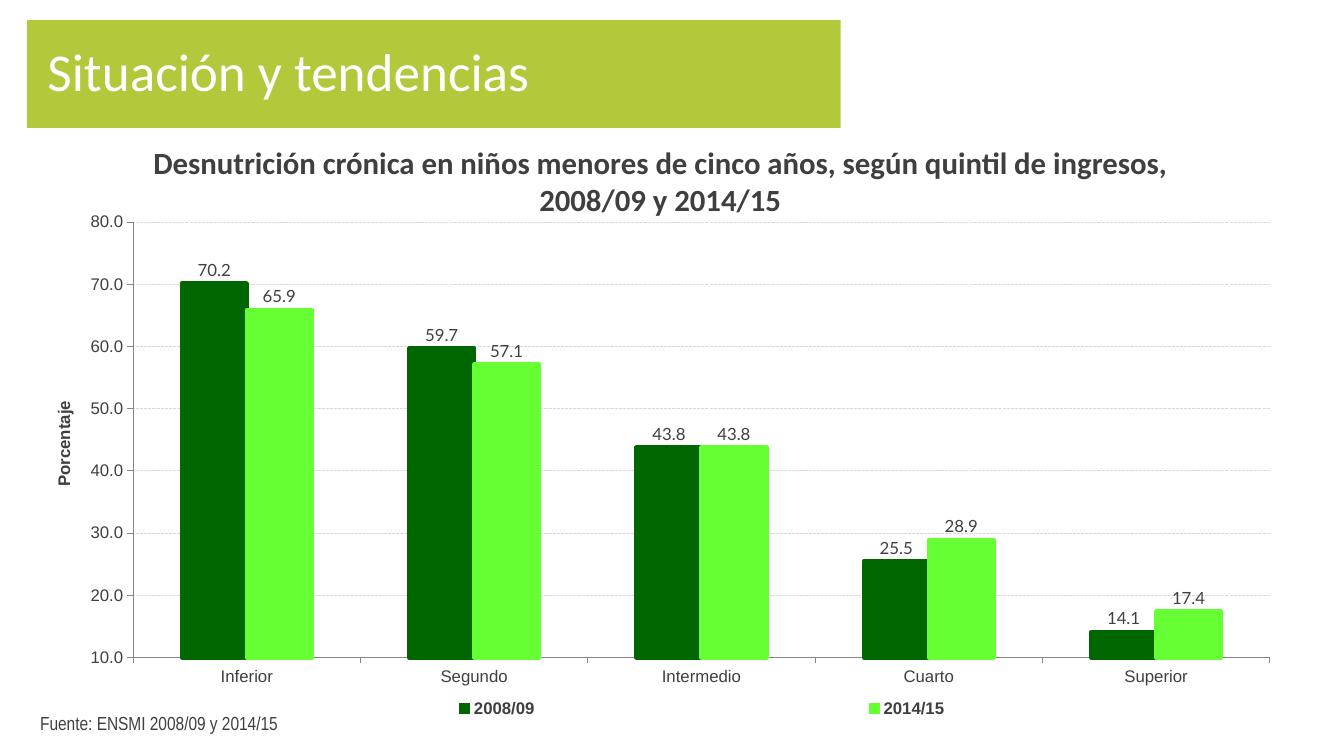
from pptx import Presentation
from pptx.chart.data import CategoryChartData
from pptx.dml.color import RGBColor
from pptx.enum.chart import XL_CHART_TYPE, XL_LABEL_POSITION, XL_LEGEND_POSITION, XL_TICK_MARK
from pptx.enum.dml import MSO_LINE
from pptx.enum.text import MSO_ANCHOR, PP_ALIGN
from pptx.oxml import parse_xml
from pptx.oxml.ns import nsdecls, qn
from pptx.util import Pt

COLORS = {
    "banner": "B3C83B",
    "white": "FFFFFF",
    "text": "3F3F3F",
    "axis": "868686",
    "grid": "D9D9D9",
    "2008/09": "006600",
    "2014/15": "66FF33",
}
QUINTILES = ["Inferior", "Segundo", "Intermedio", "Cuarto", "Superior"]
MALNUTRITION = {
    "2008/09": [70.2, 59.7, 43.8, 25.5, 14.1],
    "2014/15": [65.9, 57.1, 43.8, 28.9, 17.4],
}


def color(name):
    return RGBColor.from_string(COLORS[name])


def format_font(font, name, size, tint="text", bold=False):
    font.name = name
    font.size = Pt(size)
    font.bold = bold
    font.color.rgb = color(tint)


def write_text(frame, text, align=PP_ALIGN.LEFT, spacing=None, **font_format):
    paragraph = frame.paragraphs[0]
    paragraph.alignment = align
    if spacing:
        paragraph.line_spacing = spacing
    run = paragraph.add_run()
    run.text = text
    format_font(run.font, **font_format)


def format_line(line, tint, width):
    line.color.rgb = color(tint)
    line.width = Pt(width)


def place_chart_part(element, index, target="", **fractions):
    previous = element.find(qn("c:layout"))
    if previous is not None:
        element.remove(previous)
    values = "".join(f'<c:{key} val="{value}"/>' for key, value in fractions.items())
    element.insert(index, parse_xml(
        f'<c:layout {nsdecls("c")}><c:manualLayout>{target}'
        f'<c:xMode val="edge"/><c:yMode val="edge"/>{values}'
        '</c:manualLayout></c:layout>'))


class SlideBuilder:
    label_font = "Arial"
    label_size = 12

    def __init__(self, presentation):
        self.slide = presentation.slides.add_slide(presentation.slide_layouts[5])

    def title(self, text, left, top, width, height):
        shape = self.slide.shapes.title
        shape.left, shape.top, shape.width, shape.height = map(Pt, (left, top, width, height))
        shape.fill.solid()
        shape.fill.fore_color.rgb = color("banner")
        frame = shape.text_frame
        frame.word_wrap = True
        frame.vertical_anchor = MSO_ANCHOR.MIDDLE
        frame.margin_left, frame.margin_right = Pt(14.4), Pt(79.2)
        write_text(frame, text, spacing=0.9, name="Calibri", size=38, tint="white")

    def text(self, text, left, top, width, height, **text_format):
        shape = self.slide.shapes.add_textbox(*map(Pt, (left, top, width, height)))
        shape.text_frame.word_wrap = True
        write_text(shape.text_frame, text, **text_format)

    def axis(self, axis):
        axis.major_tick_mark = XL_TICK_MARK.OUTSIDE
        axis.minor_tick_mark = XL_TICK_MARK.NONE
        format_font(axis.tick_labels.font, self.label_font, self.label_size)
        format_line(axis.format.line, "axis", 0.75)

    def column_chart(self, categories, series_values, axis_title, left, top, width, height):
        data = CategoryChartData(number_format="General")
        data.categories = categories
        for name, values in series_values.items():
            data.add_series(name, values)
        frame = self.slide.shapes.add_chart(
            XL_CHART_TYPE.COLUMN_CLUSTERED, *map(Pt, (left, top, width, height)), data)
        chart = frame.chart
        format_font(chart.font, "Lato", 10)
        chart.has_title = False

        plot = chart.plots[0]
        plot.gap_width = 150
        plot.overlap = 0
        plot.vary_by_categories = False
        for series in plot.series:
            series.format.fill.solid()
            series.format.fill.fore_color.rgb = color(series.name)
            format_line(series.format.line, series.name, 3)
            labels = series.data_labels
            labels.show_value = True
            labels.position = XL_LABEL_POSITION.OUTSIDE_END
            format_font(labels.font, "Lato", self.label_size)

        self.axis(chart.category_axis)
        value_axis = chart.value_axis
        self.axis(value_axis)
        value_axis.minimum_scale, value_axis.maximum_scale = 10, 80
        value_axis.major_unit = 10
        value_axis.tick_labels.number_format = "#,##0.0"
        value_axis.tick_labels.number_format_is_linked = False
        grid = value_axis.major_gridlines.format.line
        format_line(grid, "grid", 0.75)
        grid.dash_style = MSO_LINE.SQUARE_DOT
        write_text(value_axis.axis_title.text_frame, axis_title, align=PP_ALIGN.CENTER,
                   name=self.label_font, size=self.label_size, bold=True)

        chart.has_legend = True
        chart.legend.position = XL_LEGEND_POSITION.RIGHT
        chart.legend.include_in_layout = False
        format_font(chart.legend.font, self.label_font, self.label_size, bold=True)

        root = chart.element
        place_chart_part(root.find(".//" + qn("c:plotArea")), 0,
                         '<c:layoutTarget val="inner"/>', x=0.082, y=0.038, w=0.905, h=0.731)
        place_chart_part(root.find(".//" + qn("c:legend")), 1, x=0.08, y=0.83, w=0.91, h=0.05)
        place_chart_part(root.find(".//" + qn("c:valAx") + "/" + qn("c:title")), 1,
                         x=0.016, y=0.333)


def main():
    presentation = Presentation()
    presentation.slide_width, presentation.slide_height = Pt(960), Pt(540)
    builder = SlideBuilder(presentation)
    builder.title("Situación y tendencias", 19.44, 14.4, 581, 77)
    builder.column_chart(QUINTILES, MALNUTRITION, "Porcentaje", 21.6, 142.56, 897.12, 425.52)
    builder.text("Fuente: ENSMI 2008/09 y 2014/15", 21.6, 504.72, 524.16, 23.76,
                 name="Arial Narrow", size=13.5)
    builder.text("Desnutrición crónica en niños menores de cinco años, según quintil de ingresos, "
                 "2008/09 y 2014/15", 63.36, 99.36, 816.48, 60.48,
                 align=PP_ALIGN.CENTER, name="Calibri", size=22, bold=True)
    presentation.save("out.pptx")


if __name__ == "__main__":
    main()
